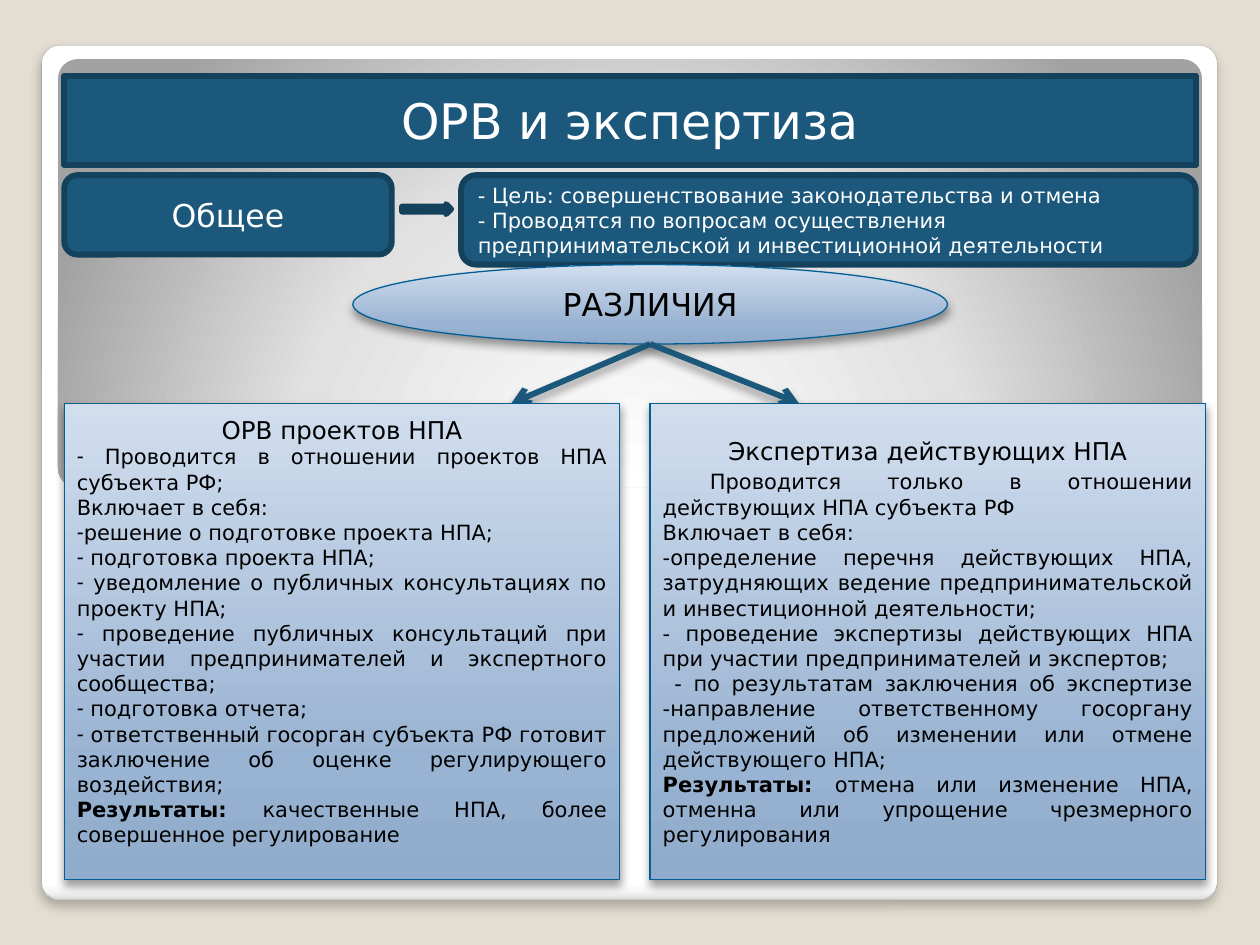
from lxml.etree import SubElement
from pptx import Presentation
from pptx.dml.color import RGBColor
from pptx.enum.shapes import MSO_CONNECTOR, MSO_SHAPE
from pptx.enum.text import MSO_ANCHOR, MSO_AUTO_SIZE, PP_ALIGN
from pptx.oxml.ns import qn
from pptx.util import Pt

ROUNDED, ELLIPSE = MSO_SHAPE.ROUNDED_RECTANGLE, MSO_SHAPE.OVAL
RIGHT_ARROW = MSO_SHAPE.RIGHT_ARROW
STRAIGHT = MSO_CONNECTOR.STRAIGHT
LEFT, CENTER, JUSTIFY = PP_ALIGN.LEFT, PP_ALIGN.CENTER, PP_ALIGN.JUSTIFY
TOP, MIDDLE = MSO_ANCHOR.TOP, MSO_ANCHOR.MIDDLE
NO_AUTOFIT = MSO_AUTO_SIZE.NONE

FONT = "DejaVu Sans"
NAVY, NAVY_EDGE, BLUE_EDGE = "1B587C", "14415C", "035E94"
WHITE, BLACK = "FFFFFF", "000000"
HEAVY = 3.35
BLUE_STOPS = [(0, "90ABCB"), (25, "99B3D2"), (100, "D1DEEE")]
FRAME_STOPS = [(0, WHITE), (98, WHITE), (99, "F7F7F7"), (100, "DADADA")]
PANEL_STOPS = [(0, WHITE), (55, "E1E1E1"), (100, "A2A2A2")]

COLUMN_TOP, COLUMN_WIDTH, COLUMN_HEIGHT = 230.4, 317.5, 272.2
LEFT_COLUMN, RIGHT_COLUMN = 36.7, 371.5
FORK = (371.5, 196.6)

COMMON_POINTS = [
    "- Цель: совершенствование законодательства и отмена",
    "- Проводятся по вопросам осуществления предпринимательской и инвестиционной деятельности",
]
DRAFT_STEPS = [
    ("-", " Проводится в отношении проектов НПА субъекта РФ;"),
    (None, "Включает в себя:"),
    ("-", "решение о подготовке проекта НПА;"),
    ("-", " подготовка проекта НПА;"),
    ("-", " уведомление о публичных консультациях по проекту НПА;"),
    ("-", " проведение публичных консультаций при участии предпринимателей и экспертного сообщества;"),
    ("-", " подготовка отчета;"),
    ("-", " ответственный госорган субъекта РФ готовит заключение об оценке регулирующего воздействия;"),
]
REVIEW_STEPS = [
    (None, "Включает в себя:"),
    (None, "-определение перечня действующих НПА, затрудняющих ведение предпринимательской и инвестиционной деятельности;"),
    (None, "- проведение экспертизы действующих НПА при участии предпринимателей и экспертов;"),
    (None, " - по результатам заключения об экспертизе -направление ответственному госоргану предложений об изменении или отмене действующего НПА;"),
]
DRAFT_RESULT = "качественные НПА, более совершенное регулирование"
REVIEW_RESULT = "отмена или изменение НПА, отменна или упрощение чрезмерного регулирования"


def color(code):
    """Turn a hex string into a colour."""
    return RGBColor.from_string(code)


def paint(shape, fill, edge=None, width=0):
    """Give a shape a solid fill and an optional outline."""
    shape.fill.solid()
    shape.fill.fore_color.rgb = color(fill)
    if edge:
        shape.line.color.rgb = color(edge)
        shape.line.width = Pt(width)
    else:
        shape.line.fill.background()


def blend(shape, stops, angle=None):
    """Replace the solid fill by a linear gradient, or a radial one without angle."""
    properties = shape._element.spPr
    solid = properties.find(qn("a:solidFill"))
    gradient = SubElement(properties, qn("a:gradFill"), rotWithShape="1")
    stop_list = SubElement(gradient, qn("a:gsLst"))
    for position, code in stops:
        stop = SubElement(stop_list, qn("a:gs"), pos=str(position * 1000))
        SubElement(stop, qn("a:srgbClr"), val=code)
    if angle is None:
        radial = SubElement(gradient, qn("a:path"), path="circle")
        SubElement(radial, qn("a:fillToRect"), l="50000", t="175000", r="50000", b="-75000")
    else:
        SubElement(gradient, qn("a:lin"), ang=str(angle * 60000), scaled="0")
    properties.replace(solid, gradient)


def cast_shadow(shape, opacity=40, blur=5.2, distance=3):
    """Add a soft shadow that falls straight down."""
    properties = shape._element.spPr
    effects = properties.find(qn("a:effectLst"))
    if effects is None:
        effects = SubElement(properties, qn("a:effectLst"))
    shadow = SubElement(effects, qn("a:outerShdw"), blurRad=str(Pt(blur)), dist=str(Pt(distance)),
                        dir="5400000", algn="ctr", rotWithShape="0")
    tint = SubElement(shadow, qn("a:srgbClr"), val=BLACK)
    SubElement(tint, qn("a:alpha"), val=str(opacity * 1000))


def add_block(slide, kind, box, fill, edge=None, width=0, corner=None):
    """Add a preset shape without shadow."""
    block = slide.shapes.add_shape(kind, *map(Pt, box))
    paint(block, fill, edge, width)
    block.shadow.inherit = False
    if corner is not None:
        block.adjustments[0] = corner
    return block


def place(slide, placeholder, box):
    """Move a placeholder to its box, in front of what is already drawn."""
    placeholder.left, placeholder.top, placeholder.width, placeholder.height = map(Pt, box)
    slide.shapes._spTree.append(placeholder._element)


def prepare_text(shape, anchor=MIDDLE):
    """Set wrapping and anchoring, and return the text frame."""
    frame = shape.text_frame
    frame.word_wrap = True
    frame.auto_size = NO_AUTOFIT
    frame.vertical_anchor = anchor
    return frame


def add_paragraph(frame, align, ink, runs, bullet=None):
    """Add a paragraph made of (text, size, bold) runs."""
    first = frame.paragraphs[0]
    paragraph = frame.add_paragraph() if first.runs else first
    paragraph.alignment = align
    paragraph.space_before = Pt(0)
    properties = paragraph._p.get_or_add_pPr()
    properties.set("marL", "0")
    properties.set("indent", "0")
    if bullet:
        SubElement(properties, qn("a:buChar"), char=bullet)
    else:
        SubElement(properties, qn("a:buNone"))
    for text, size, bold in runs:
        run = paragraph.add_run()
        run.text = text
        run.font.name = FONT
        run.font.size = Pt(size)
        run.font.bold = bold
        run.font.color.rgb = color(ink)


def add_label(shape, text, size, ink):
    """Write one centred line in a shape."""
    add_paragraph(prepare_text(shape), CENTER, ink, [(text, size, False)])


def add_branch(slide, end):
    """Draw an arrow from the fork to the top of a column."""
    branch = slide.shapes.add_connector(STRAIGHT, *map(Pt, FORK + end))
    branch.line.color.rgb = color(NAVY)
    branch.line.width = Pt(HEAVY)
    SubElement(branch.line._get_or_add_ln(), qn("a:tailEnd"), type="arrow")
    cast_shadow(branch)


def fill_column(slide, column, left, anchor, heading, opening, steps, result):
    """Turn a body placeholder into a gradient column with heading, steps and result."""
    place(slide, column, (left, COLUMN_TOP, COLUMN_WIDTH, COLUMN_HEIGHT))
    paint_blue(column)
    frame = prepare_text(column, anchor)
    add_paragraph(frame, CENTER, BLACK, [(heading, 14, False)])
    if opening:
        add_paragraph(frame, JUSTIFY, BLACK, opening)
    for bullet, step in steps:
        add_paragraph(frame, JUSTIFY, BLACK, [(step, 12, False)], bullet)
    add_paragraph(frame, JUSTIFY, BLACK, [("Результаты: ", 12, True), (result, 12, False)])
    return frame


def paint_blue(shape):
    """Apply the light blue gradient, outline and shadow."""
    paint(shape, BLUE_STOPS[0][1], BLUE_EDGE, 0.75)
    blend(shape, BLUE_STOPS, 270)
    cast_shadow(shape)


def main():
    """Build the slide and save it."""
    deck = Presentation()
    deck.slide_width, deck.slide_height = Pt(720), Pt(540)
    slide = deck.slides.add_slide(deck.slide_layouts[3])
    title, draft, review = slide.placeholders
    slide.background.fill.solid()
    slide.background.fill.fore_color.rgb = color("E3DED1")

    frame = add_block(slide, ROUNDED, (23.8, 25.9, 671.8, 488.2), WHITE, "A4A4A4", 0.16, 0.021)
    blend(frame, FRAME_STOPS, 90)
    cast_shadow(frame, 25, 6, 4)
    panel = add_block(slide, ROUNDED, (33.1, 33.8, 653.8, 244.8), WHITE, corner=0.046)
    blend(panel, PANEL_STOPS)

    place(slide, title, (36.7, 43.2, 646.6, 51.1))
    paint(title, NAVY, NAVY_EDGE, HEAVY)
    add_label(title, "ОРВ и экспертиза", 28, WHITE)

    common = add_block(slide, ROUNDED, (36.7, 100.1, 187.2, 45.4), NAVY, NAVY_EDGE, HEAVY)
    add_label(common, "Общее", 18, WHITE)
    add_block(slide, RIGHT_ARROW, (229.7, 116.6, 28.1, 5.8), NAVY, NAVY_EDGE, HEAVY)
    goals = add_block(slide, ROUNDED, (263.5, 100.1, 419.8, 51.1), NAVY, NAVY_EDGE, HEAVY)
    goals_text = prepare_text(goals)
    for point in COMMON_POINTS:
        add_paragraph(goals_text, LEFT, WHITE, [(point, 12, False)])

    differences = add_block(slide, ELLIPSE, (201.6, 151.2, 339.8, 45.4), WHITE)
    paint_blue(differences)
    add_label(differences, "РАЗЛИЧИЯ", 18, BLACK)
    for branch_end in (292.3, 456.5):
        add_branch(slide, (branch_end, COLUMN_TOP))

    draft_text = fill_column(slide, draft, LEFT_COLUMN, TOP, "ОРВ проектов НПА", None,
                             DRAFT_STEPS, DRAFT_RESULT)
    draft_text.margin_top = Pt(6.5)
    opening = [(" ", 14, False),
               ("Проводится только в отношении действующих НПА субъекта РФ", 12, False)]
    fill_column(slide, review, RIGHT_COLUMN, MIDDLE, "Экспертиза действующих НПА", opening,
                REVIEW_STEPS, REVIEW_RESULT)
    deck.save("out.pptx")


if __name__ == "__main__":
    main()
